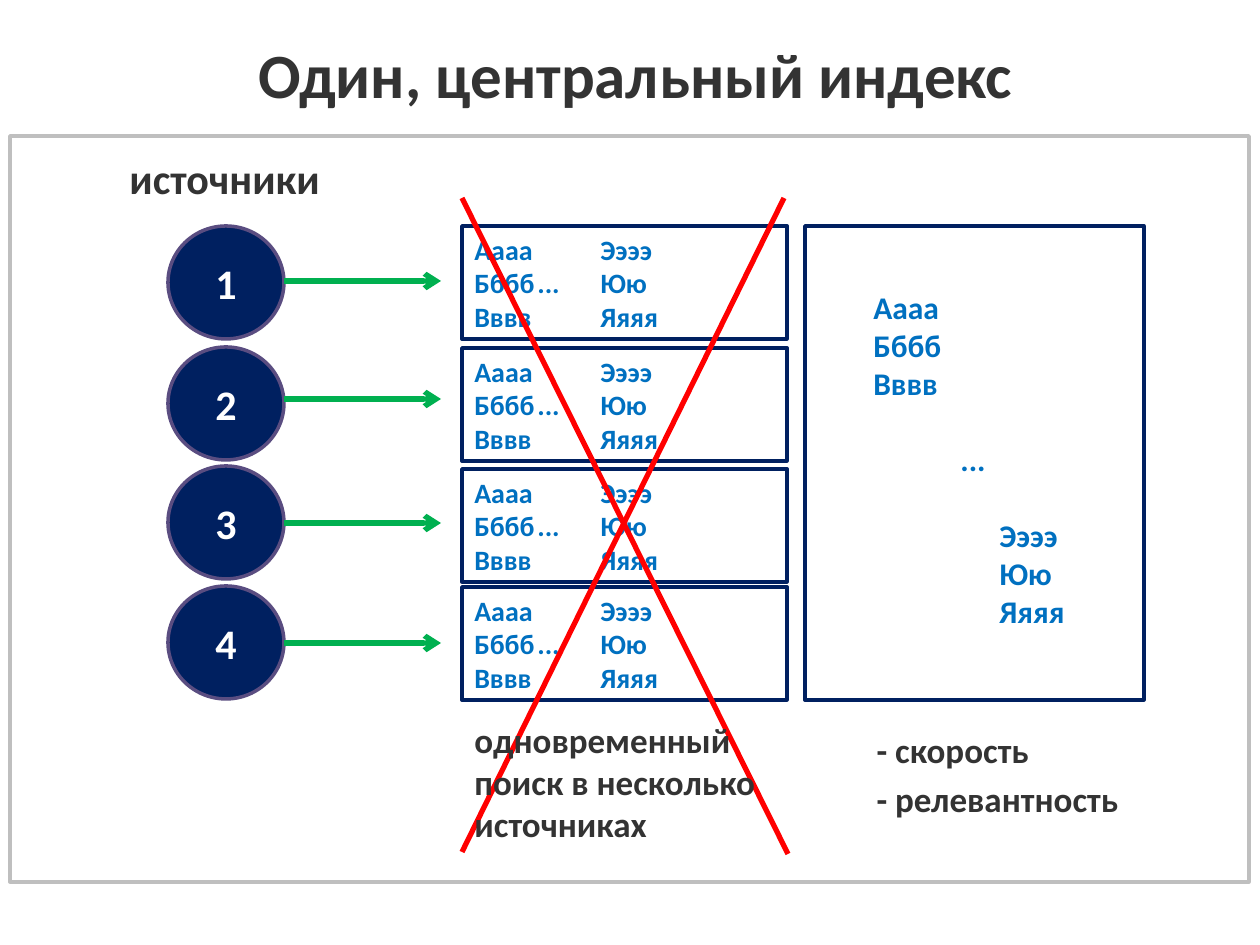
from lxml import etree
from pptx import Presentation, util as u
from pptx.dml.color import RGBColor
from pptx.enum import shapes, text
from pptx.oxml.ns import qn

# Content
TITLE = "Один, центральный индекс"
SOURCES_LABEL = "источники"
FIRST_WORDS = ["Аааа", "Бббб", "Вввв"]
LAST_WORDS = ["Ээээ", "Юю", "Яяяя"]
GAP = "..."
CAPTION = "одновременный поиск в несколько источниках"
BENEFITS = ["- скорость", "- релевантность"]

# Each source: label, top of circle, middle of arrow, top of its index
SOURCES = [("1", 226, 281, 226), ("2", 347, 399, 348),
           ("3", 466, 523, 469), ("4", 586, 643, 587)]
CROSS = [(462, 198, 788, 854), (784, 198, 462, 852)]


class Theme:
    font = "Calibri"
    text, white, navy, blue = "333333", "FFFFFF", "002060", "0070C0"
    circle_line, arrow, cross, frame = "5A4D81", "00B050", "FF0000", "BFBFBF"
    title, label, benefit, central, index = 36, 24, 20, 18, 16
    outline, stroke = 2, 3


def px(n):
    return u.Emu(round(n * 914400 / 126))


def rgb(color):
    return RGBColor.from_string(color)


def write(tf, lines, size, color, align=text.PP_ALIGN.LEFT):
    """Fill a text frame with one bold paragraph per line."""
    tf.word_wrap = True
    for i, line in enumerate(lines):
        p = tf.paragraphs[0] if i == 0 else tf.add_paragraph()
        p.text = line
        p.alignment = align
        f = p.font
        f.name, f.size, f.bold = Theme.font, u.Pt(size), True
        f.color.rgb = rgb(color)
    return tf.paragraphs


def add_text(slide, box, lines, size, color):
    tb = slide.shapes.add_textbox(*map(px, box))
    return write(tb.text_frame, lines, size, color)


def add_box(slide, kind, box, line, fill=None):
    sp = slide.shapes.add_shape(kind, *map(px, box))
    sp.shadow.inherit = False
    if fill:
        sp.fill.solid()
        sp.fill.fore_color.rgb = rgb(fill)
    else:
        sp.fill.background()
    sp.line.color.rgb = rgb(line)
    sp.line.width = u.Pt(Theme.outline)
    return sp


def add_line(slide, ends, color, arrow=False):
    cx = slide.shapes.add_connector(shapes.MSO_CONNECTOR.STRAIGHT, *map(px, ends))
    cx.line.color.rgb = rgb(color)
    cx.line.width = u.Pt(Theme.stroke)
    if arrow:
        etree.SubElement(cx.line._get_or_add_ln(), qn("a:tailEnd"), type="arrow")
    etree.SubElement(cx._element.spPr, qn("a:effectLst"))


def indent(p, n):
    pPr = p._p.get_or_add_pPr()
    pPr.set("marL", str(px(n)))
    pPr.set("indent", "0")
    return pPr


def place(sp, box):
    sp.left, sp.top, sp.width, sp.height = map(px, box)


def main():
    prs = Presentation()
    prs.slide_width, prs.slide_height = px(1260), px(945)
    slide = prs.slides.add_slide(prs.slide_layouts[1])
    rect, oval = shapes.MSO_SHAPE.RECTANGLE, shapes.MSO_SHAPE.OVAL

    # Frame and title
    add_box(slide, rect, (10, 136, 1239, 746), Theme.frame)
    title = slide.shapes.title
    place(title, (16, 21, 1239, 105))
    write(title.text_frame, [TITLE], Theme.title, Theme.text, text.PP_ALIGN.CENTER)

    # Sources, each with an arrow to its own index
    add_text(slide, (117, 146, 230, 63), [SOURCES_LABEL], Theme.label, Theme.text)
    rows = [f"{first}\t{GAP if i == 1 else ''}\t{last}"
            for i, (first, last) in enumerate(zip(FIRST_WORDS, LAST_WORDS))]
    for label, circle_top, arrow_y, index_top in SOURCES:
        circle = add_box(slide, oval, (168, circle_top, 116, 113),
                         Theme.circle_line, Theme.navy)
        circle.text_frame.vertical_anchor = text.MSO_ANCHOR.MIDDLE
        write(circle.text_frame, [label], Theme.label, Theme.white,
              text.PP_ALIGN.CENTER)
        add_line(slide, (284, arrow_y, 441, arrow_y), Theme.arrow, arrow=True)
        index = add_box(slide, rect, (462, index_top, 325, 113), Theme.navy)
        tf = index.text_frame
        tf.vertical_anchor = text.MSO_ANCHOR.MIDDLE
        tf.margin_top = tf.margin_bottom = tf.margin_right = 0
        write(tf, rows, Theme.index, Theme.blue)

    # Separate indexes crossed out
    for ends in CROSS:
        add_line(slide, ends, Theme.cross)
    add_text(slide, (462, 712, 321, 140), [CAPTION], Theme.benefit, Theme.text)

    # Central index
    add_box(slide, rect, (805, 226, 339, 474), Theme.navy)
    paras = add_text(slide, (861, 282, 253, 357), FIRST_WORDS + [GAP] + LAST_WORDS,
                     Theme.central, Theme.blue)
    gap, *last = paras[len(FIRST_WORDS):]
    indent(gap, 87)
    for p in last:
        indent(p, 126)
    for p in (gap, last[0]):
        p.space_before = u.Pt(22)

    # Benefits
    body = slide.placeholders[1]
    place(body, (805, 701, 339, 154))
    tf = body.text_frame
    tf.auto_size = text.MSO_AUTO_SIZE.NONE
    for p in tf.paragraphs:
        p.space_before = u.Pt(0)
    paras = write(tf, BENEFITS, Theme.benefit, Theme.text)
    paras[0].line_spacing = 1.5
    paras[1].space_before = u.Pt(4)
    for p in paras:
        pPr = indent(p, 59)
        pPr.insert_element_before(etree.Element(qn("a:buNone")),
                                  "a:tabLst", "a:defRPr", "a:extLst")

    prs.save("out.pptx")


if __name__ == "__main__":
    main()
